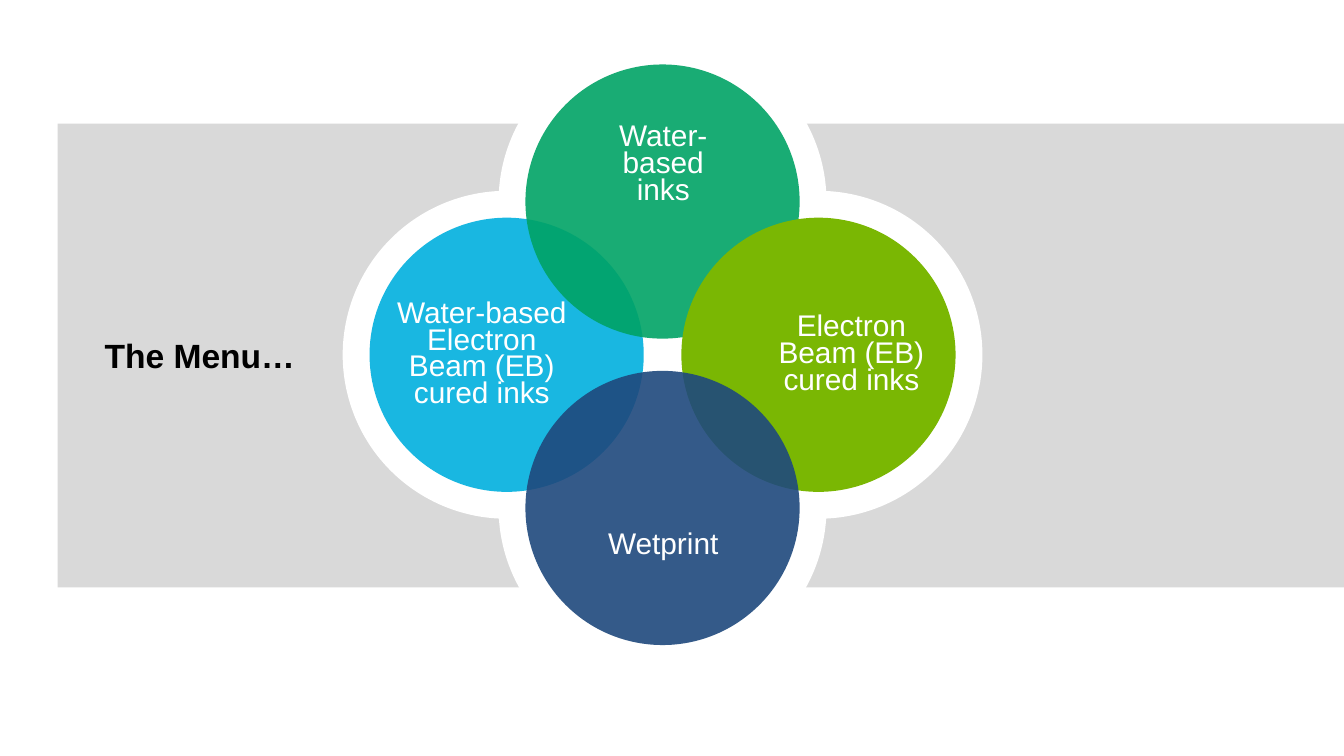
import pptx
import pptx.util
import pptx.dml.color
import pptx.enum.shapes
import pptx.enum.text
import pptx.oxml.ns
import lxml.etree

Inches = pptx.util.Inches
SHAPE = pptx.enum.shapes.MSO_SHAPE
ANCHOR = pptx.enum.text.MSO_ANCHOR
ALIGN = pptx.enum.text.PP_ALIGN

HALO, DISC = 2.44, 2.04  # circle diameters
DX, DY = 1.16, 1.14  # from the middle of the flower to each circle

# direction, colour, opacity %, text lines, text box relative to circle centre, anchor
PETALS = [
    ((-1, 0), "00B0DE", 90, ["Water-based Electron Beam (EB) cured inks"],
     (-0.94, -0.45, 1.51, 0.91), ANCHOR.MIDDLE),
    ((0, -1), "00A365", 90, ["Water-", "based", "inks"],
     (-0.75, -0.62, 1.51, 0.71), ANCHOR.TOP),
    ((1, 0), "7AB703", 100, ["Electron Beam (EB) cured inks"],
     (-0.51, -0.35, 1.51, 0.71), ANCHOR.MIDDLE),
    ((0, 1), "1F497D", 90, ["Wetprint"],
     (-0.75, 0.14, 1.51, 0.3), ANCHOR.TOP),
]


def rgb(value):
    return pptx.dml.color.RGBColor.from_string(value)


def add_filled(shapes, kind, box, color, opacity=100):
    sp = shapes.add_shape(kind, *map(Inches, box))
    sp.shadow.inherit = False
    sp.fill.solid()
    sp.fill.fore_color.rgb = rgb(color)
    sp.line.fill.background()
    if opacity < 100:
        clr = sp.fill._xPr.find(".//" + pptx.oxml.ns.qn("a:srgbClr"))
        alpha = lxml.etree.SubElement(clr, pptx.oxml.ns.qn("a:alpha"))
        alpha.set("val", str(opacity * 1000))
    return sp


def add_circle(shapes, cx, cy, size, color, opacity=100):
    box = (cx - size / 2, cy - size / 2, size, size)
    return add_filled(shapes, SHAPE.OVAL, box, color, opacity)


def add_text(shapes, box, lines, size, color, bold=False, wrap=True,
             anchor=ANCHOR.TOP, align=ALIGN.LEFT, spacing=None):
    tf = shapes.add_textbox(*map(Inches, box)).text_frame
    tf.word_wrap = wrap
    tf.auto_size = pptx.enum.text.MSO_AUTO_SIZE.SHAPE_TO_FIT_TEXT
    tf.vertical_anchor = anchor
    p = tf.paragraphs[0]
    p.alignment = align
    p.line_spacing = spacing
    for i, line in enumerate(lines):
        if i:
            p.add_line_break()
        r = p.add_run()
        r.text = line
        r.font.name = "Arial"
        r.font.size = pptx.util.Pt(size)
        r.font.bold = bold
        r.font.color.rgb = rgb(color)


def add_band(slide, x, y, w, h):
    """Grey band with the slide title at its left."""
    add_filled(slide.shapes, SHAPE.RECTANGLE, (x, y, w, h), "D9D9D9")
    add_text(slide.shapes, (x + 0.25, y + 1.52, 1.63, 0.4), ["The Menu…"],
             18, "000000", bold=True, wrap=False)


def add_flower(slide, x, y, w, h):
    """Four overlapping circles around the middle of the box."""
    cx, cy = x + w / 2, y + h / 2
    centres = [(cx + px * DX, cy + py * DY) for (px, py), *_ in PETALS]

    # White halos
    halos = slide.shapes.add_group_shape()
    for px, py in centres:
        add_circle(halos.shapes, px, py, HALO, "FFFFFF")

    # Coloured circles with their labels
    for (px, py), (_, color, opacity, lines, box, anchor) in zip(centres, PETALS):
        add_circle(slide.shapes, px, py, DISC, color, opacity)
        left, top, width, height = box
        add_text(slide.shapes, (px + left, py + top, width, height), lines,
                 16, "FFFFFF", anchor=anchor, align=ALIGN.CENTER, spacing=0.75)


def main():
    prs = pptx.Presentation()
    # Widescreen, 16:9
    prs.slide_width = Inches(10)
    prs.slide_height = Inches(10 * 9 / 16)
    slide = prs.slides.add_slide(prs.slide_layouts[6])
    add_band(slide, 0.43, 0.92, 9.57, 3.45)
    add_flower(slide, 2.55, 0.28, 4.76, 4.72)
    prs.save("out.pptx")


if __name__ == "__main__":
    main()
